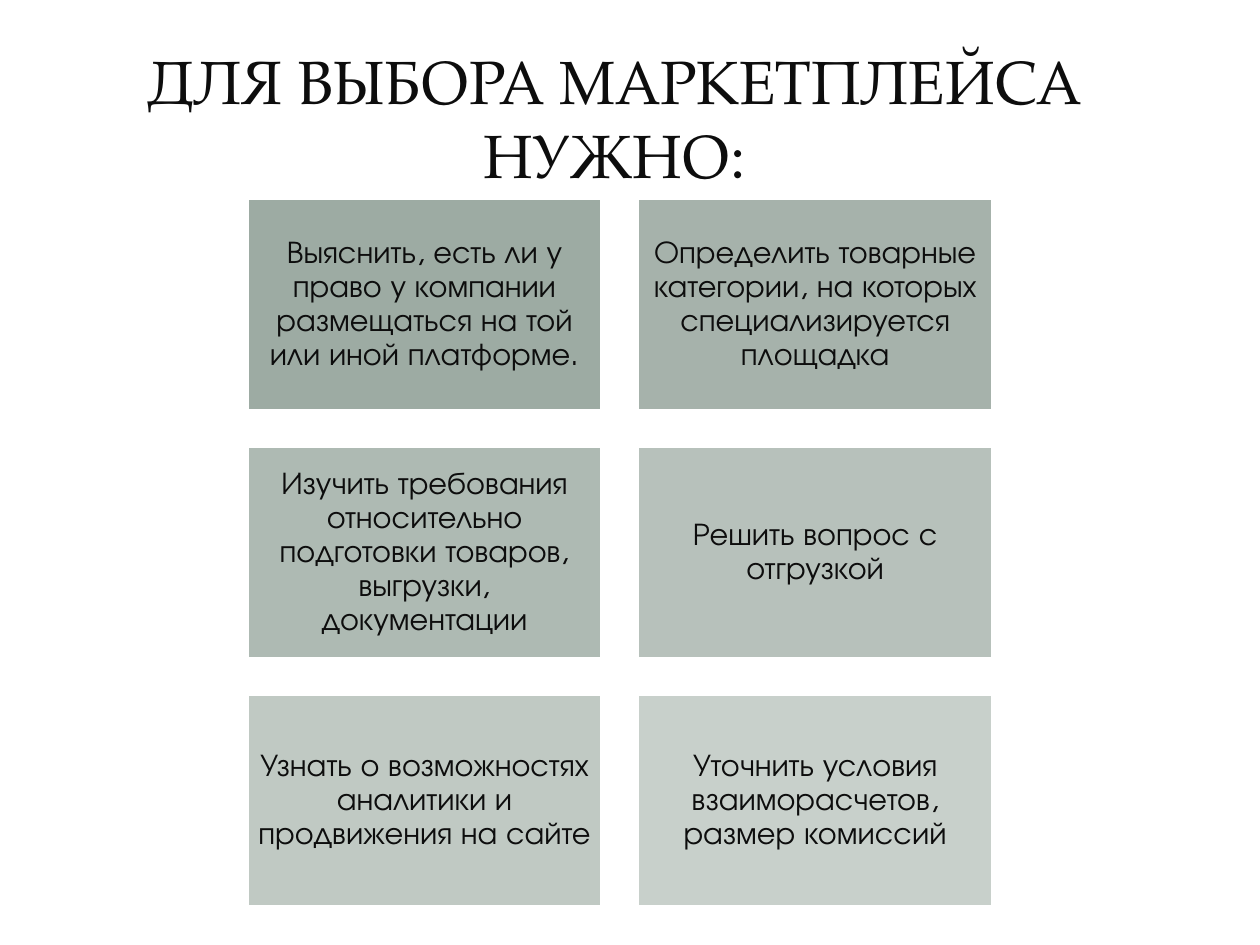
from lxml import etree
from pptx import Presentation
from pptx.dml.color import RGBColor
from pptx.enum.shapes import MSO_SHAPE
from pptx.enum.text import MSO_ANCHOR, MSO_AUTO_SIZE, PP_ALIGN
from pptx.oxml.ns import qn
from pptx.util import Inches, Pt

# Content
TITLE = "ДЛЯ ВЫБОРА МАРКЕТПЛЕЙСА НУЖНО:"
STEPS = [
    "Выяснить, есть ли у право у компании размещаться на той или иной платформе.",
    "Определить товарные категории, на которых специализируется площадка",
    "Изучить требования относительно подготовки товаров, выгрузки, документации",
    "Решить вопрос с отгрузкой",
    "Узнать о возможностях аналитики и продвижения на сайте",
    "Уточнить условия взаиморасчетов, размер комиссий",
]

# Style
INK = RGBColor(0x0D, 0x0D, 0x0D)
SAGE = RGBColor(0x93, 0xA2, 0x99)
WHITE = RGBColor(0xFF, 0xFF, 0xFF)
TITLE_FONT = "TeX Gyre Pagella"
BODY_FONT = "TeX Gyre Adventor"

# Grid, in inches
COLUMNS = 2
LEFT, TOP = 1.96, 1.57
CARD_W, CARD_H = 2.82, 1.69
GAP = 0.28
STEP_X, STEP_Y = CARD_W + GAP, CARD_H + GAP

# Opacity falls evenly from the first card to the last, in percent
FIRST_OPACITY, OPACITY_STEP = 90, 8


def format_text(tf, font, size):
    tf.word_wrap = True
    tf.auto_size = MSO_AUTO_SIZE.NONE
    tf.vertical_anchor = MSO_ANCHOR.MIDDLE
    p = tf.paragraphs[0]
    p.alignment = PP_ALIGN.CENTER
    r = p.runs[0]
    r.font.name = font
    r.font.size = Pt(size)
    r.font.color.rgb = INK
    return p


def add_card(s, index, text):
    row, col = divmod(index, COLUMNS)
    sp = s.shapes.add_shape(
        MSO_SHAPE.RECTANGLE,
        Inches(LEFT + col * STEP_X), Inches(TOP + row * STEP_Y),
        Inches(CARD_W), Inches(CARD_H))
    sp.shadow.inherit = False
    sp.line.color.rgb = WHITE
    sp.line.width = Pt(2)

    # Translucent fill
    sp.fill.solid()
    sp.fill.fore_color.rgb = SAGE
    color = sp.fill._xPr.find(qn("a:solidFill")).find(qn("a:srgbClr"))
    opacity = FIRST_OPACITY - index * OPACITY_STEP
    etree.SubElement(color, qn("a:alpha")).set("val", str(opacity * 1000))

    tf = sp.text_frame
    tf.text = text
    tf.margin_left = tf.margin_right = Inches(0.07)
    tf.margin_top = tf.margin_bottom = Inches(0.07)
    format_text(tf, BODY_FONT, 18).line_spacing = 0.9


def main():
    prs = Presentation()
    prs.slide_width, prs.slide_height = Inches(10), Inches(7.5)
    s = prs.slides.add_slide(prs.slide_layouts[5])

    # Title
    title = s.shapes.title
    title.left, title.top = Inches(0.59), Inches(0.29)
    title.width, title.height = Inches(8.58), Inches(1.28)
    title.text_frame.text = TITLE
    format_text(title.text_frame, TITLE_FONT, 35)

    # Cards
    for index, text in enumerate(STEPS):
        add_card(s, index, text)

    prs.save("out.pptx")


if __name__ == "__main__":
    main()
